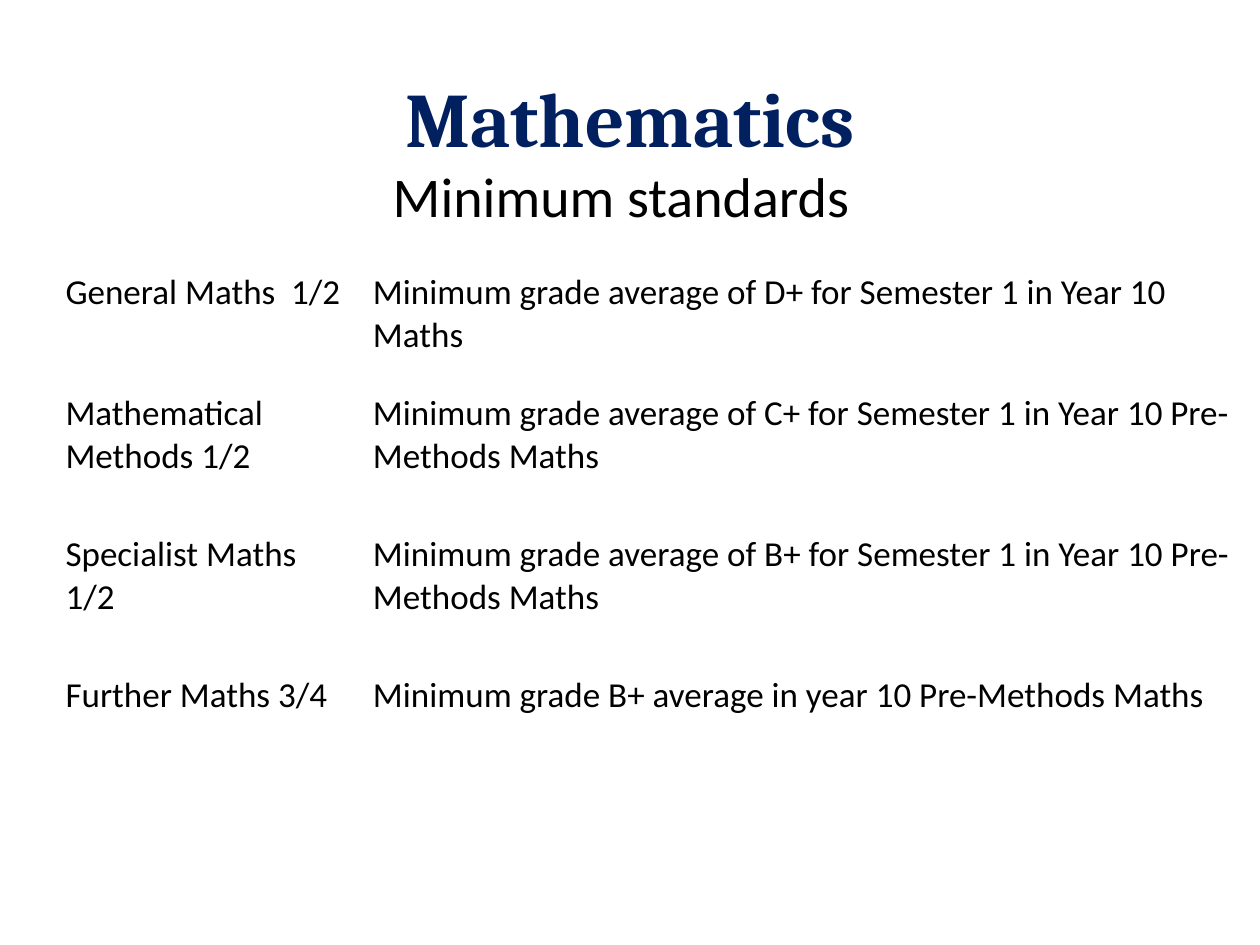
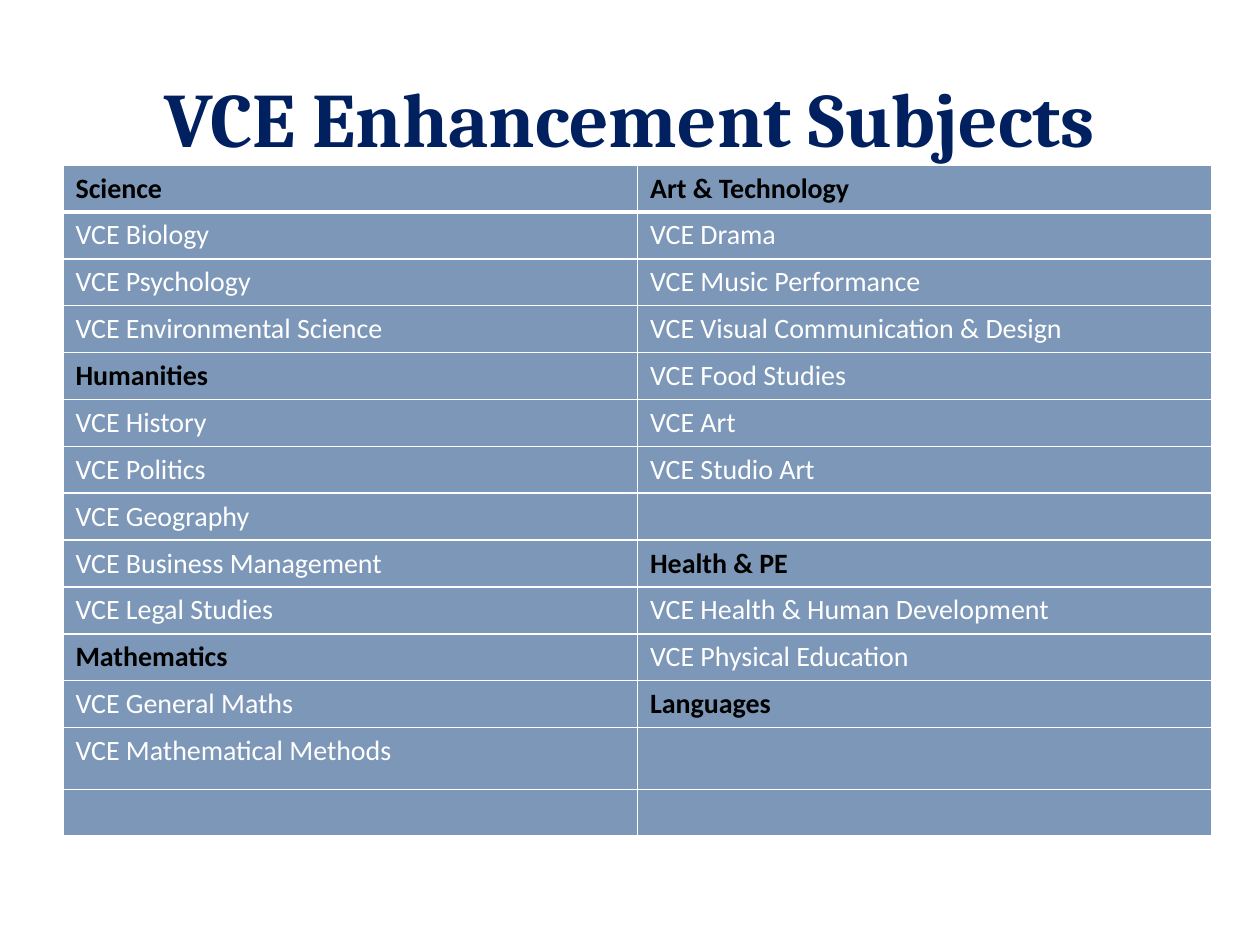
from dataclasses import dataclass

from lxml import etree
from pptx import Presentation
from pptx.dml.color import RGBColor
from pptx.enum.text import MSO_ANCHOR, PP_ALIGN
from pptx.oxml.ns import qn
from pptx.util import Inches, Pt

CENTER, LEFT = PP_ALIGN.CENTER, PP_ALIGN.LEFT
MIDDLE = MSO_ANCHOR.MIDDLE
TITLE_ONLY = 5


@dataclass(frozen=True)
class Theme:
    title_font: str = "Cambria"
    body_font: str = "Calibri"
    navy: str = "002060"
    black: str = "000000"
    white: str = "FFFFFF"
    table_blue: str = "376092"
    fill_opacity: int = 65
    title_size: int = 44
    subtitle_size: int = 32
    standards_size: int = 20
    subjects_size: int = 16
    thin_border: int = 1
    header_border: int = 3


THEME = Theme()

STANDARDS = [
    ("General Maths  1/2", "Minimum grade average of D+ for Semester 1 in Year 10 Maths"),
    ("Mathematical Methods 1/2",
     "Minimum grade average of C+ for Semester 1 in Year 10 Pre-Methods Maths"),
    ("Specialist Maths 1/2",
     "Minimum grade average of B+ for Semester 1 in Year 10 Pre-Methods Maths"),
    ("Further Maths 3/4", "Minimum grade B+ average in year 10 Pre-Methods Maths"),
]

SUBJECTS = [
    ("Science", "Art & Technology"),
    ("VCE Biology", "VCE Drama"),
    ("VCE Psychology", "VCE Music Performance"),
    ("VCE Environmental Science", "VCE Visual Communication & Design"),
    ("Humanities", "VCE Food Studies"),
    ("VCE History", "VCE Art"),
    ("VCE Politics", "VCE Studio Art"),
    ("VCE Geography", ""),
    ("VCE Business Management", "Health & PE"),
    ("VCE Legal Studies", "VCE Health & Human Development"),
    ("Mathematics", "VCE Physical Education"),
    ("VCE General Maths", "Languages"),
    ("VCE Mathematical Methods", ""),
    ("", ""),
]


# Text
def write_text(text_frame, text, font_name, size, color, bold=False, align=LEFT):
    text_frame.text = text
    paragraph = text_frame.paragraphs[0]
    paragraph.alignment = align
    for run in paragraph.runs:
        run.font.name = font_name
        run.font.size = Pt(size)
        run.font.bold = bold
        run.font.color.rgb = RGBColor.from_string(color)
    if not text:
        # An empty cell keeps the type size, so its row stays as low as the others
        end = etree.SubElement(paragraph._p, qn("a:endParaRPr"))
        end.set("sz", str(size * 100))


def add_titled_slide(presentation, title_text):
    slide = presentation.slides.add_slide(presentation.slide_layouts[TITLE_ONLY])
    title = slide.shapes.title
    title.left, title.top = Inches(0.5), Inches(0.3)
    title.width, title.height = Inches(9), Inches(1.25)
    title.text_frame.vertical_anchor = MIDDLE
    write_text(title.text_frame, title_text, THEME.title_font, THEME.title_size,
               THEME.navy, bold=True, align=CENTER)
    return slide


def add_subtitle(slide, text):
    box = slide.shapes.add_textbox(Inches(0.43), Inches(1.23), Inches(9), Inches(0.87))
    box.text_frame.word_wrap = True
    write_text(box.text_frame, text, THEME.body_font, THEME.subtitle_size,
               THEME.black, align=CENTER)


# Tables
def set_borders(cell, top, bottom):
    properties = cell._tc.get_or_add_tcPr()
    widths = {"L": THEME.thin_border, "R": THEME.thin_border, "T": top, "B": bottom}
    for side, width in widths.items():
        line = etree.SubElement(properties, qn(f"a:ln{side}"), w=str(Pt(width)))
        fill = etree.SubElement(line, qn("a:solidFill"))
        etree.SubElement(fill, qn("a:srgbClr"), val=THEME.white)


def fill_cell(cell, color):
    if color is None:
        cell.fill.background()
        return
    cell.fill.solid()
    cell.fill.fore_color.rgb = RGBColor.from_string(color)
    color_element = cell._tc.tcPr.find(qn("a:solidFill")).find(qn("a:srgbClr"))
    etree.SubElement(color_element, qn("a:alpha"), val=str(THEME.fill_opacity * 1000))


def add_grid(slide, left, top, column_widths, row_heights, rows, size, style_for, fill=None):
    """Draw a table; style_for gives the colour and weight of a cell's text."""
    frame = slide.shapes.add_table(
        len(rows), len(column_widths), Inches(left), Inches(top),
        Inches(sum(column_widths)), Inches(sum(row_heights)))
    table = frame.table
    table.first_row = table.horz_banding = False
    for column, width in zip(table.columns, column_widths):
        column.width = Inches(width)
    for row, height in zip(table.rows, row_heights):
        row.height = Inches(height)
    for row_index, texts in enumerate(rows):
        top_border = THEME.header_border if row_index == 1 else THEME.thin_border
        bottom_border = THEME.header_border if row_index == 0 else THEME.thin_border
        for column_index, text in enumerate(texts):
            cell = table.cell(row_index, column_index)
            color, bold = style_for(text)
            write_text(cell.text_frame, text, THEME.body_font, size, color, bold)
            set_borders(cell, top_border, bottom_border)
            fill_cell(cell, fill)


def standard_style(text):
    return THEME.black, False


def subject_style(text):
    """Learning areas are bold black; the subjects below them are white."""
    is_area = not text.startswith("VCE")
    return (THEME.black if is_area else THEME.white), is_area


# Slides
def add_standards_slide(presentation):
    slide = add_titled_slide(presentation, "Mathematics")
    add_subtitle(slide, "Minimum standards")
    add_grid(slide, 0.42, 2.1, [2.44, 7.24], [0.96, 1.12, 1.12, 0.54],
             STANDARDS, THEME.standards_size, standard_style)


def add_subjects_slide(presentation):
    slide = add_titled_slide(presentation, "VCE Enhancement Subjects")
    row_heights = [0.37] * len(SUBJECTS)
    row_heights[-2] = 0.49
    add_grid(slide, 0.5, 1.31, [4.56] * 2, row_heights, SUBJECTS,
             THEME.subjects_size, subject_style, THEME.table_blue)


def main():
    presentation = Presentation()
    presentation.slide_width, presentation.slide_height = Inches(10), Inches(7.5)
    add_standards_slide(presentation)
    add_subjects_slide(presentation)
    presentation.save("out.pptx")


if __name__ == "__main__":
    main()
